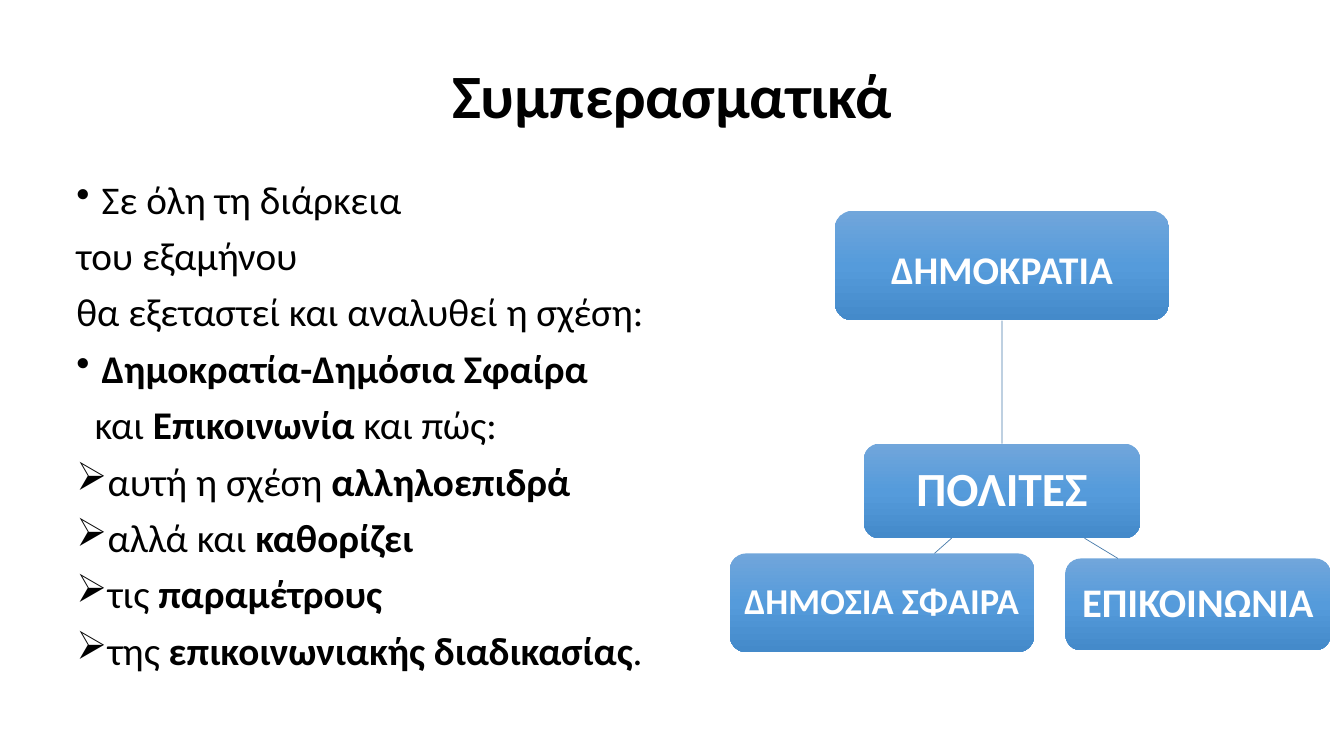
from copy import deepcopy
from lxml.etree import SubElement as Sub
from pptx import Presentation
from pptx.dml.color import RGBColor as Rgb
from pptx.enum.shapes import MSO_CONNECTOR as Conn, MSO_SHAPE as Form
from pptx.enum.text import MSO_ANCHOR as Anchor, PP_ALIGN as Align
from pptx.oxml.ns import qn
from pptx.util import Inches, Pt

BLACK = Rgb(0x00, 0x00, 0x00)
WHITE = Rgb(0xFF, 0xFF, 0xFF)
EDGE = Rgb(0x49, 0x7C, 0xAB)
LIGHT = Rgb(0x71, 0xA6, 0xDB)
MID = Rgb(0x55, 0x9B, 0xDB)
DARK = Rgb(0x44, 0x8A, 0xCA)

TITLE = "Συμπερασματικά"
POINTS = [
    ("•", 0.25, "Σε όλη τη διάρκεια"),
    ("", 0, "του εξαμήνου"),
    ("", 0, "θα εξεταστεί και αναλυθεί η σχέση:"),
    ("•", 0.25, "*Δημοκρατία-Δημόσια Σφαίρα"),
    ("", 0.18, "και *Επικοινωνία *και πώς:"),
    ("➢", 0.25, "αυτή η σχέση *αλληλοεπιδρά"),
    ("➢", 0.25, "αλλά και *καθορίζει"),
    ("➢", 0.25, "τις *παραμέτρους"),
    ("➢", 0.25, "της *επικοινωνιακής διαδικασίας*."),
]


class Deck:
    font = "Calibri"
    cols = rows = 100

    def __init__(self):
        self.prs = Presentation()
        self.prs.slide_width = Inches(13.33)
        self.prs.slide_height = Inches(7.5)
        self.slide = self.prs.slides.add_slide(self.prs.slide_layouts[6])
        self.shapes = self.slide.shapes

    def grid(self, x, y):
        return (round(self.prs.slide_width * x / self.cols),
                round(self.prs.slide_height * y / self.rows))

    def style(self, par, size, color, bold=None):
        par.line_spacing = 0.9
        par.font.name = self.font
        par.font.size = Pt(size)
        par.font.color.rgb = color
        par.font.bold = bold

    def label(self, shape, text, size, color):
        frame = shape.text_frame
        frame.word_wrap = True
        frame.vertical_anchor = Anchor.MIDDLE
        par = frame.paragraphs[0]
        par.text = text
        par.alignment = Align.CENTER
        self.style(par, size, color, True)

    def title(self, x, y, w, h, text):
        box = self.shapes.add_textbox(*self.grid(x, y), *self.grid(w, h))
        self.label(box, text, 44, BLACK)

    def bullets(self, x, y, w, h, points):
        box = self.shapes.add_textbox(*self.grid(x, y), *self.grid(w, h))
        frame = box.text_frame
        frame.word_wrap = True
        for num, (mark, indent, text) in enumerate(points):
            par = frame.add_paragraph() if num else frame.paragraphs[0]
            self.style(par, 28, BLACK)
            par.space_before = Pt(10)
            props = par._p.get_or_add_pPr()
            props.set("marL", str(Inches(indent)))
            if mark:
                props.set("indent", str(-Inches(indent)))
                bullet = Sub(props, qn("a:buChar"), char=mark)
                props.find(qn("a:defRPr")).addprevious(bullet)
            for part, words in enumerate(text.split("*")):
                if words:
                    run = par.add_run()
                    run.text = words
                    run.font.bold = part % 2 == 1

    def node(self, x, y, w, h, text, size, drop=0):
        box = self.shapes.add_shape(
            Form.ROUNDED_RECTANGLE, *self.grid(x, y), *self.grid(w, h))
        box.shadow.inherit = False
        box.line.fill.background()
        box.fill.gradient()
        box.fill.gradient_angle = 270
        stops = box._element.spPr.find(qn("a:gradFill")).find(qn("a:gsLst"))
        stops.append(deepcopy(stops[-1]))
        for stop, place, color in zip(
                box.fill.gradient_stops, (0, 0.5, 1), (LIGHT, MID, DARK)):
            stop.position = place
            stop.color.rgb = color
        frame = box.text_frame
        frame.margin_left = frame.margin_right = Inches(0.07)
        frame.margin_bottom = Inches(0.07)
        frame.margin_top = Inches(0.07 + drop)
        self.label(box, text, size, WHITE)
        return box

    def link(self, start=(0, 0), end=(0, 0), upper=None, lower=None):
        line = self.shapes.add_connector(
            Conn.STRAIGHT, *self.grid(*start), *self.grid(*end))
        line.line.color.rgb = EDGE
        line.line.width = Pt(0.5)
        Sub(line._element.spPr, qn("a:effectLst"))
        if upper and lower:
            line.begin_connect(upper, 2)
            line.end_connect(lower, 0)


def main():
    deck = Deck()
    deck.title(6.9, 5.33, 86.25, 15.47, TITLE)
    deck.bullets(4.95, 23.2, 88.2, 66.8, POINTS)
    people = deck.node(64.28, 58.67, 20.55, 12.53, "ΠΟΛΙΤΕΣ", 34)
    rule = deck.node(62.1, 27.87, 24.9, 14.53, "ΔΗΜΟΚΡΑΤΙΑ", 28, 0.12)
    deck.node(79.28, 73.87, 19.73, 12.13, "ΕΠΙΚΟΙΝΩΝΙΑ", 29)
    deck.node(54.3, 73.2, 22.65, 13.07, "ΔΗΜΟΣΙΑ ΣΦΑΙΡΑ", 26)
    deck.link(upper=rule, lower=people)
    deck.link((80.7, 71.2), (83.18, 73.87))
    deck.link((70.8, 71.2), (69.53, 73.2))
    deck.prs.save("out.pptx")


if __name__ == "__main__":
    main()
